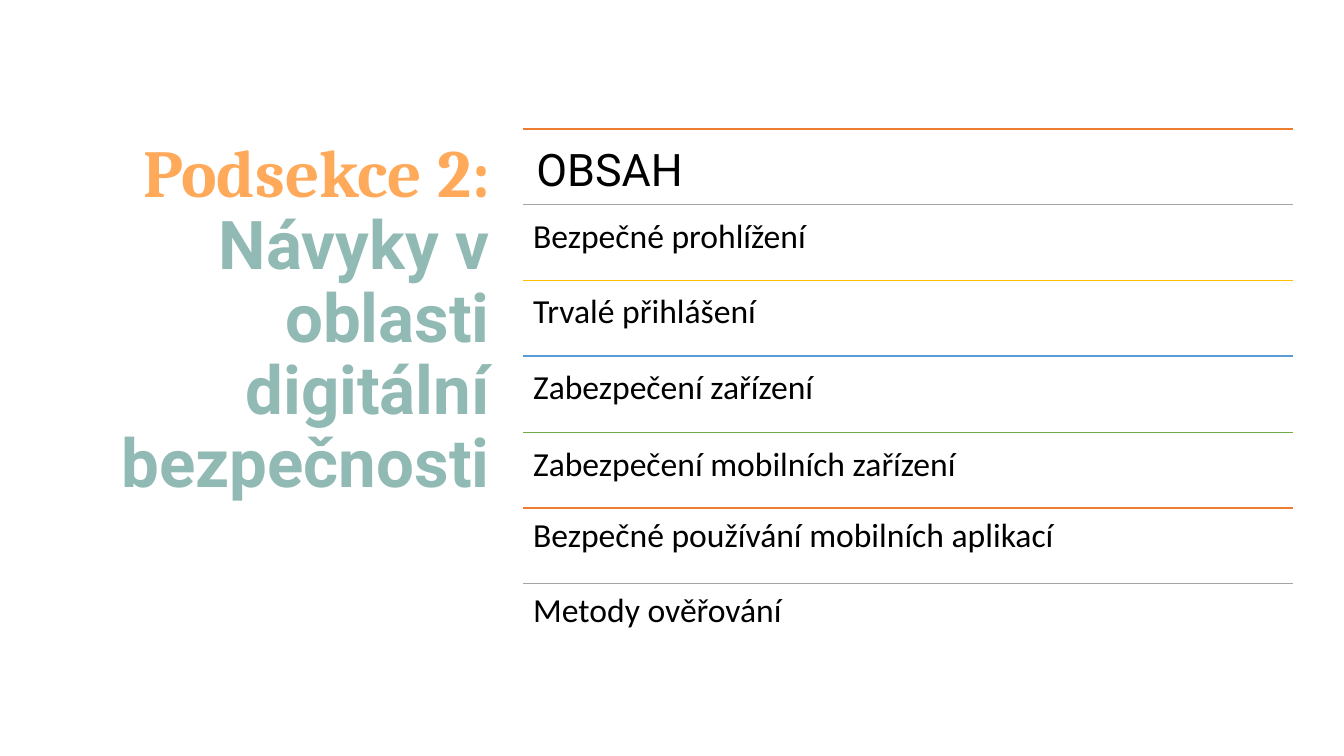
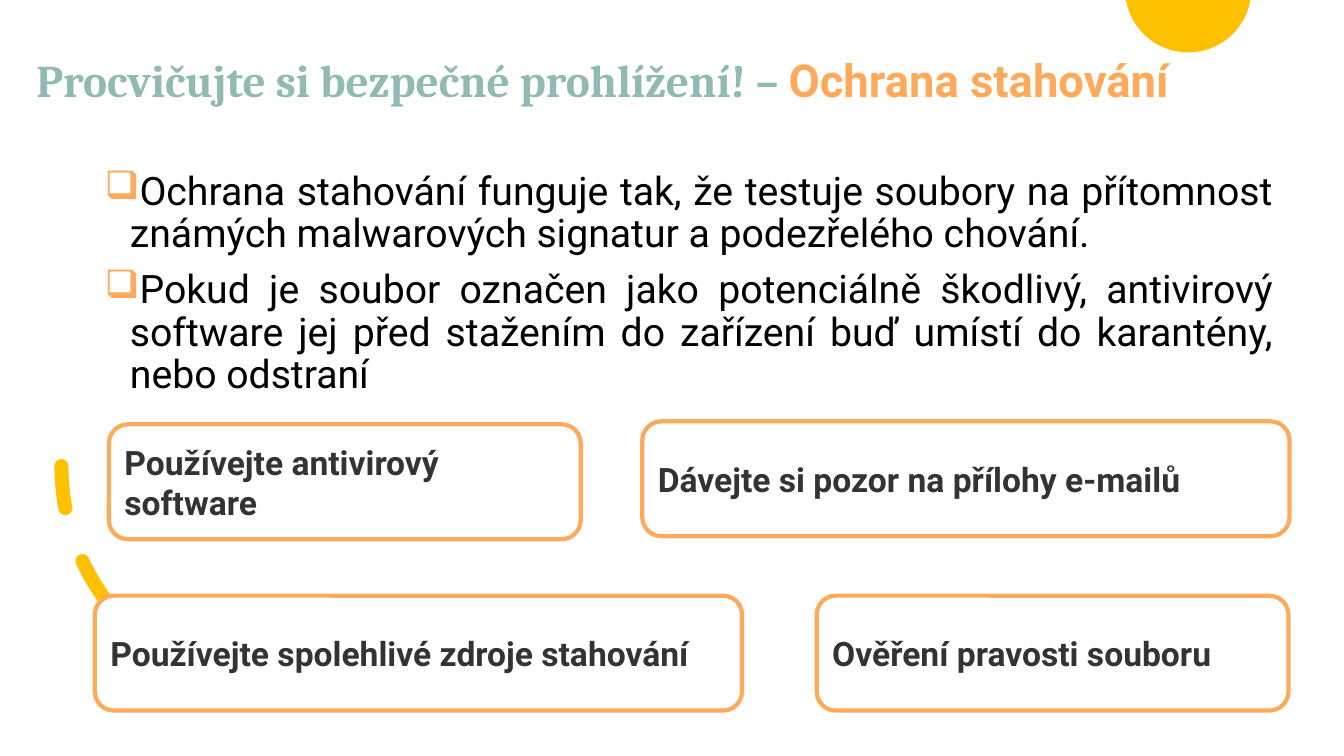
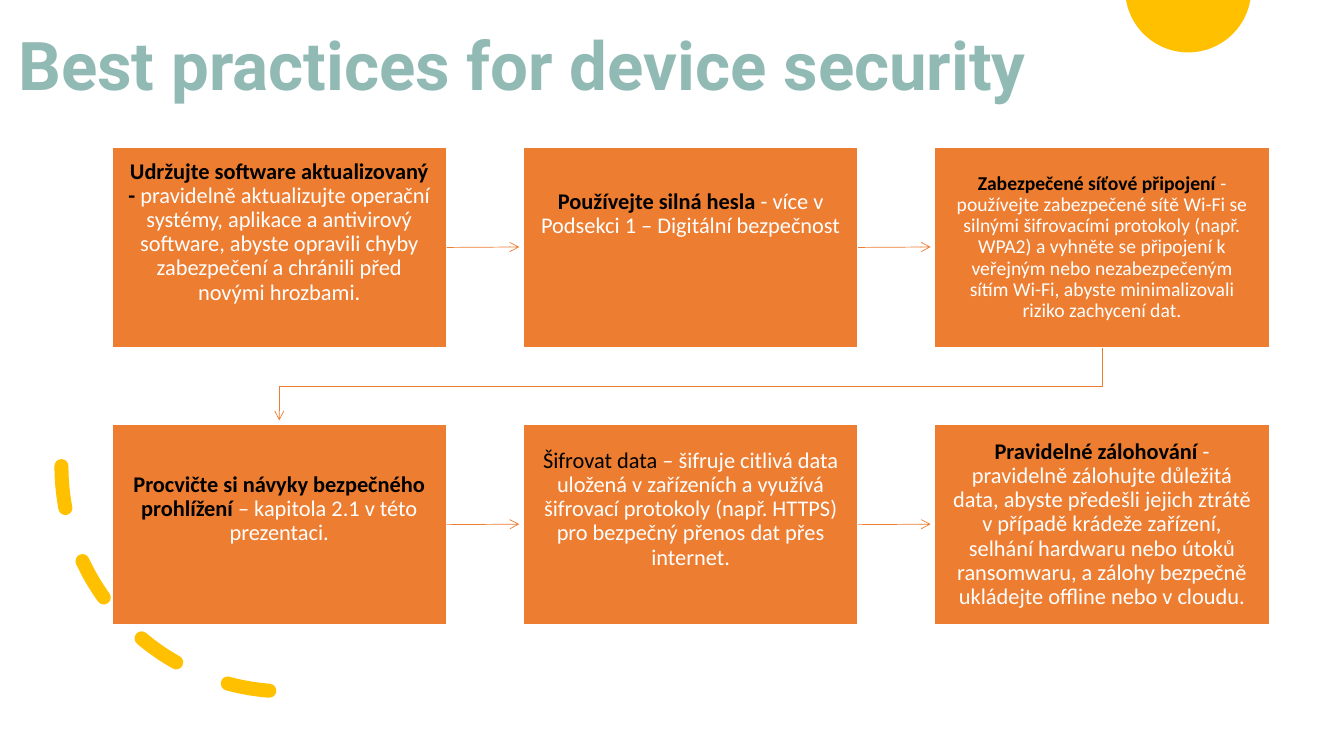
from dataclasses import dataclass
from itertools import pairwise
from math import asin, cos, pi, sin

from lxml.etree import SubElement
from pptx import Presentation
from pptx.dml.color import RGBColor
from pptx.enum.dml import MSO_LINE
from pptx.enum.shapes import MSO_CONNECTOR as Connector
from pptx.enum.shapes import MSO_SHAPE as Preset
from pptx.enum.text import MSO_ANCHOR as Anchor
from pptx.enum.text import MSO_AUTO_SIZE as AutoSize
from pptx.enum.text import PP_ALIGN as Align
from pptx.oxml.ns import qn
from pptx.shapes.autoshape import Shape
from pptx.slide import Slide
from pptx.util import Emu, Pt

EMU_PER_PX = 9144


@dataclass(frozen=True)
class Theme:
    sage: str = "92BAB5"
    peach: str = "FFAA5A"
    orange: str = "ED7D31"
    gold: str = "FFC000"
    gray: str = "A5A5A5"
    blue: str = "5B9BD5"
    green: str = "70AD47"
    white: str = "FFFFFF"
    black: str = "000000"
    charcoal: str = "333333"
    serif: str = "Cambria"
    sans: str = "Roboto"
    plain: str = "Calibri"
    display: float = 48
    heading: float = 32.4
    agenda_head: float = 32
    body: float = 28
    label: float = 24
    step: float = 16
    small_step: float = 14


THEME = Theme()


@dataclass(frozen=True)
class Box:
    left: int
    top: int
    width: int
    height: int

    def emu(self) -> tuple[Emu, Emu, Emu, Emu]:
        return px(self.left), px(self.top), px(self.width), px(self.height)


@dataclass(frozen=True)
class Span:
    text: str
    size: float
    font: str = THEME.sans
    color: str = THEME.black
    bold: bool = False


@dataclass(frozen=True)
class AgendaRow:
    text: str
    color: str
    size: float = THEME.label
    font: str = THEME.plain
    inset: int = 10
    spacing: float = 1.0


@dataclass(frozen=True)
class Tip:
    text: str
    box: Box
    preset: Preset = Preset.ROUNDED_RECTANGLE


@dataclass(frozen=True)
class Step:
    lead: str
    detail: str
    lift: int = 15
    size: float = THEME.step
    bold: bool = True


AGENDA = (
    AgendaRow("OBSAH", THEME.orange, THEME.agenda_head, THEME.sans, 13),
    AgendaRow("Bezpečné prohlížení", THEME.gray),
    AgendaRow("Trvalé přihlášení", THEME.gold),
    AgendaRow("Zabezpečení zařízení", THEME.blue),
    AgendaRow("Zabezpečení mobilních zařízení", THEME.green),
    AgendaRow("Bezpečné používání mobilních aplikací", THEME.orange, spacing=0.9),
    AgendaRow("Metody ověřování", THEME.gray, spacing=0.9),
)

DOWNLOAD_POINTS = (
    "Ochrana stahování funguje tak, že testuje soubory na přítomnost známých "
    "malwarových signatur a podezřelého chování.",
    "Pokud je soubor označen jako potenciálně škodlivý, antivirový software jej před "
    "stažením do zařízení buď umístí do karantény, nebo odstraní",
)

TIPS = (
    Tip("Používejte antivirový software", Box(108, 421, 468, 114), Preset.FLOWCHART_ALTERNATE_PROCESS),
    Tip("Používejte spolehlivé zdroje stahování", Box(94, 591, 642, 114)),
    Tip("Ověření pravosti souboru", Box(810, 591, 468, 114)),
    Tip("Dávejte si pozor na přílohy e-mailů", Box(637, 418, 642, 114)),
)

STEP_ROWS = (
    (
        Step(
            "Udržujte software aktualizovaný - ",
            "pravidelně aktualizujte operační systémy, aplikace a antivirový software, "
            "abyste opravili chyby zabezpečení a chránili před novými hrozbami.",
        ),
        Step("Používejte silná hesla ", "- více v Podsekci 1 – Digitální bezpečnost", 33),
        Step(
            "Zabezpečené síťové připojení ",
            "- používejte zabezpečené sítě Wi-Fi se silnými šifrovacími protokoly (např. WPA2) "
            "a vyhněte se připojení k veřejným nebo nezabezpečeným sítím Wi-Fi, abyste "
            "minimalizovali riziko zachycení dat.",
            0,
            THEME.small_step,
        ),
    ),
    (
        Step("Procvičte si návyky bezpečného prohlížení ", "– kapitola 2.1 v této prezentaci."),
        Step(
            "Šifrovat data ",
            "– šifruje citlivá data uložená v zařízeních a využívá šifrovací protokoly "
            "(např. HTTPS) pro bezpečný přenos dat přes internet.",
            bold=False,
        ),
        Step(
            "Pravidelné zálohování ",
            "- pravidelně zálohujte důležitá data, abyste předešli jejich ztrátě v případě "
            "krádeže zařízení, selhání hardwaru nebo útoků ransomwaru, a zálohy bezpečně "
            "ukládejte offline nebo v cloudu.",
            0,
        ),
    ),
)


def px(length: float) -> Emu:
    return Emu(round(length * EMU_PER_PX))


def rgb(color: str) -> RGBColor:
    return RGBColor.from_string(color)


def write_text(
    shape: Shape,
    *paragraphs: tuple[Span, ...],
    align: Align = Align.LEFT,
    anchor: Anchor = Anchor.TOP,
    spacing: float = 1.0,
    before: float = 0,
    margins: tuple[int, int, int, int] = (10, 5, 10, 5),
    bullet: str = "",
) -> None:
    frame = shape.text_frame
    frame.word_wrap = True
    frame.auto_size = AutoSize.NONE
    frame.vertical_anchor = anchor
    frame.margin_left, frame.margin_top, frame.margin_right, frame.margin_bottom = map(px, margins)
    for index, spans in enumerate(paragraphs):
        paragraph = frame.add_paragraph() if index else frame.paragraphs[0]
        paragraph.alignment = align
        paragraph.line_spacing = spacing
        paragraph.space_before = Pt(before)
        for span in spans:
            run = paragraph.add_run()
            run.text = span.text
            run.font.size = Pt(span.size)
            run.font.name = span.font
            run.font.bold = span.bold
            run.font.color.rgb = rgb(span.color)
        if bullet:
            add_bullet(paragraph, bullet)


def add_bullet(paragraph, character: str) -> None:
    properties = paragraph._p.get_or_add_pPr()
    properties.set("marL", str(px(25)))
    properties.set("indent", str(px(-25)))
    color = SubElement(properties, qn("a:buClr"))
    SubElement(color, qn("a:srgbClr"), val=THEME.peach)
    SubElement(properties, qn("a:buChar"), char=character)


def add_titled_slide(
    presentation: Presentation, box: Box, *spans: Span, align: Align = Align.LEFT
) -> Slide:
    slide = presentation.slides.add_slide(presentation.slide_layouts[5])
    title = slide.shapes.title
    title.left, title.top, title.width, title.height = box.emu()
    write_text(title, spans, align=align, anchor=Anchor.MIDDLE, spacing=0.9)
    return slide


def add_panel(slide: Slide, preset: Preset, box: Box, fill: str, line: str, weight: float) -> Shape:
    panel = slide.shapes.add_shape(preset, *box.emu())
    panel.shadow.inherit = False
    panel.fill.solid()
    panel.fill.fore_color.rgb = rgb(fill)
    panel.line.color.rgb = rgb(line)
    panel.line.width = Pt(weight)
    return panel


def add_outline(slide: Slide, points: list[tuple[float, float]], close: bool) -> Shape:
    start, *others = [(px(x), px(y)) for x, y in points]
    builder = slide.shapes.build_freeform(*start, scale=1.0)
    builder.add_line_segments(others, close=close)
    outline = builder.convert_to_shape()
    outline.shadow.inherit = False
    return outline


def add_line(slide: Slide, start: tuple[int, int], end: tuple[int, int], color: str, weight: float):
    line = slide.shapes.add_connector(Connector.STRAIGHT, *map(px, (*start, *end)))
    line.line.color.rgb = rgb(color)
    line.line.width = Pt(weight)
    SubElement(line.element.spPr, qn("a:effectLst"))
    return line


def add_arrowhead(shape) -> None:
    SubElement(shape.element.spPr.find(qn("a:ln")), qn("a:tailEnd"), type="arrow")


def add_sun(slide: Slide) -> None:
    center_x, center_y, radius, segments = 1178.5, -10.5, 62.5, 48
    first = asin(-center_y / radius)
    angles = [first + (pi - 2 * first) * index / segments for index in range(segments + 1)]
    points = [(center_x + radius * cos(angle), center_y + radius * sin(angle)) for angle in angles]
    sun = add_outline(slide, points, close=True)
    sun.fill.solid()
    sun.fill.fore_color.rgb = rgb(THEME.gold)
    sun.line.fill.background()


def add_dashed_arc(slide: Slide) -> None:
    arc = slide.shapes.add_shape(Preset.ARC, *Box(61, 239, 447, 447).emu())
    arc.shadow.inherit = False
    arc.rotation = 90
    arc.fill.background()
    arc.line.color.rgb = rgb(THEME.gold)
    arc.line.width = Pt(10)
    arc.line.dash_style = MSO_LINE.DASH
    properties = arc.element.spPr
    properties.find(qn("a:xfrm")).set("flipV", "1")
    properties.find(qn("a:ln")).set("cap", "rnd")


def add_decorations(slide: Slide) -> None:
    add_sun(slide)
    add_dashed_arc(slide)


def build_agenda(presentation: Presentation) -> None:
    slide = add_titled_slide(
        presentation,
        Box(38, 85, 458, 466),
        Span("Podsekce 2:", THEME.display, THEME.serif, THEME.peach, True),
        Span(" Návyky v oblasti digitální bezpečnosti", THEME.display, color=THEME.sage, bold=True),
        align=Align.RIGHT,
    )
    left, top, width, bottom = 519, 128, 763, 654
    pitch = (bottom - top) / len(AGENDA)
    for index, row in enumerate(AGENDA):
        row_top = round(top + index * pitch)
        add_line(slide, (left, row_top), (left + width, row_top), row.color, 1)
        text_box = slide.shapes.add_textbox(*Box(left, row_top, width, round(pitch)).emu())
        write_text(
            text_box,
            (Span(row.text, row.size, row.font),),
            spacing=row.spacing,
            margins=(row.inset,) * 4,
        )


def build_download_protection(presentation: Presentation) -> None:
    slide = add_titled_slide(
        presentation,
        Box(26, 40, 1216, 85),
        Span("Procvičujte si bezpečné prohlížení! – ", THEME.heading, THEME.serif, THEME.sage, True),
        Span("Ochrana stahování", THEME.heading, color=THEME.peach, bold=True),
    )
    add_decorations(slide)
    write_text(
        slide.shapes.add_textbox(*Box(94, 165, 1178, 267).emu()),
        *((Span(point, THEME.body),) for point in DOWNLOAD_POINTS),
        align=Align.JUSTIFY,
        spacing=0.9,
        before=10,
        bullet="❑",
    )
    for tip in TIPS:
        panel = add_panel(slide, tip.preset, tip.box, THEME.white, THEME.peach, 3)
        label = Span(tip.text, THEME.label, color=THEME.charcoal, bold=True)
        write_text(panel, (label,), anchor=Anchor.MIDDLE)


def build_device_security(presentation: Presentation) -> None:
    slide = add_titled_slide(
        presentation,
        Box(8, 26, 1045, 85),
        Span("Best practices for device security", THEME.display, color=THEME.sage, bold=True),
    )
    add_decorations(slide)
    left, top, width, height = 111, 146, 332, 199
    column_pitch, row_pitch, arrow_gap = 408, 275, 4
    for row_index, steps in enumerate(STEP_ROWS):
        row_top = top + row_index * row_pitch
        middle = row_top + height // 2
        panels = []
        for column, step in enumerate(steps):
            box = Box(left + column * column_pitch, row_top, width, height)
            panel = add_panel(slide, Preset.RECTANGLE, box, THEME.orange, THEME.white, 1)
            write_text(
                panel,
                (
                    Span(step.lead, step.size, THEME.plain, bold=step.bold),
                    Span(step.detail, step.size, THEME.plain, THEME.white),
                ),
                align=Align.CENTER,
                anchor=Anchor.MIDDLE,
                spacing=0.9,
                margins=(16, 0, 16, 2 * step.lift),
            )
            panels.append((panel, box))
        for (panel, box), (_, following) in pairwise(panels):
            start = (box.left + width, middle)
            arrow = add_line(slide, start, (following.left - arrow_gap, middle), THEME.orange, 0.5)
            arrow.begin_connect(panel, 3)
            add_arrowhead(arrow)
    first_x = left + width // 2
    last_x = first_x + 2 * column_pitch
    bend_y = top + height + 38
    corners = [
        (last_x, top + height),
        (last_x, bend_y),
        (first_x, bend_y),
        (first_x, top + row_pitch - arrow_gap),
    ]
    return_arrow = add_outline(slide, corners, close=False)
    return_arrow.fill.background()
    return_arrow.line.color.rgb = rgb(THEME.orange)
    return_arrow.line.width = Pt(0.5)
    add_arrowhead(return_arrow)


def main() -> None:
    presentation = Presentation()
    presentation.slide_width = px(1333)
    presentation.slide_height = px(750)
    build_agenda(presentation)
    build_download_protection(presentation)
    build_device_security(presentation)
    presentation.save("out.pptx")


if __name__ == "__main__":
    main()
